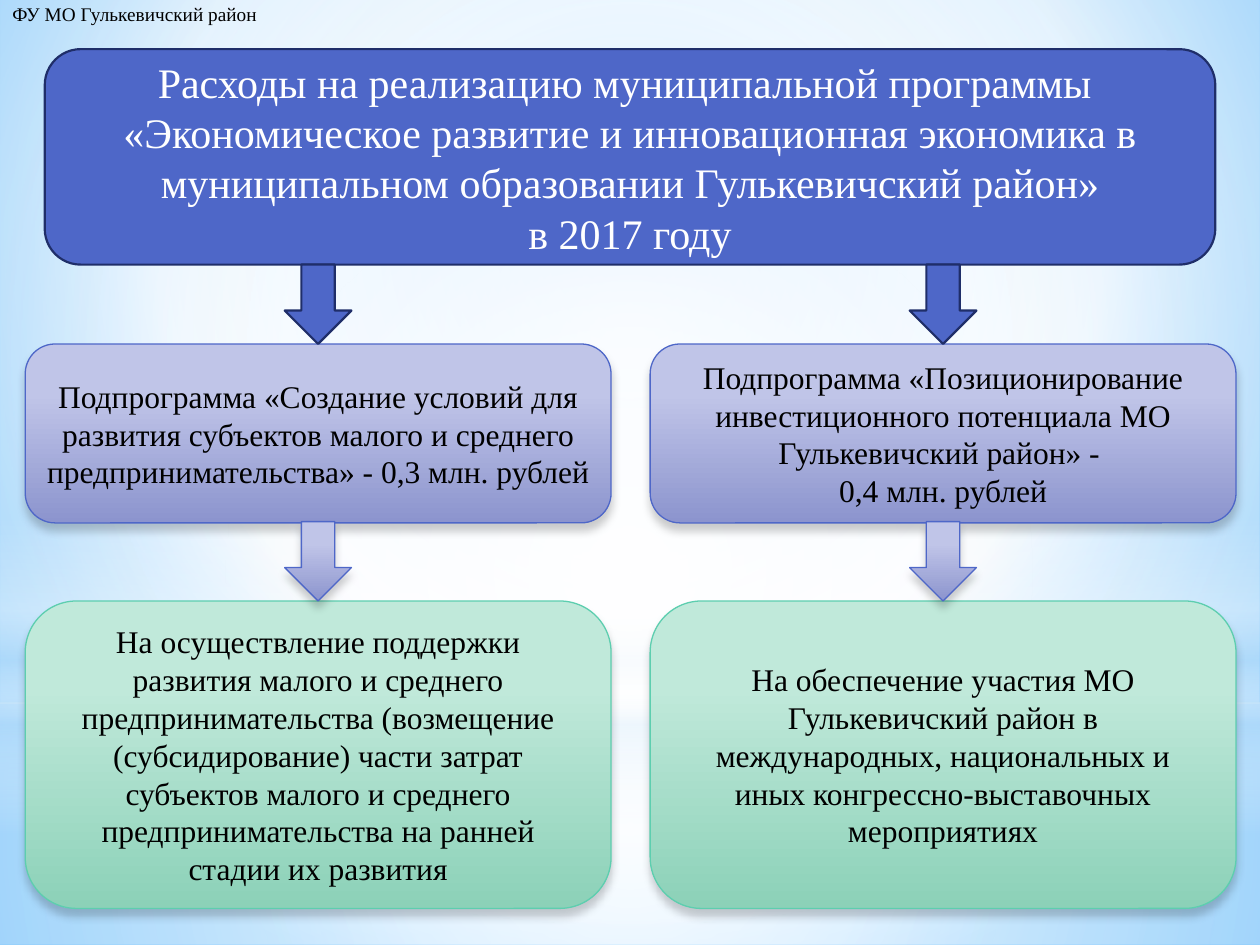
"""Build a slide on the spending of a municipal programme and its two subprogrammes."""
from lxml.etree import SubElement
from pptx import Presentation
from pptx.dml.color import RGBColor
from pptx.enum.shapes import MSO_SHAPE
from pptx.enum.text import MSO_ANCHOR, MSO_AUTO_SIZE, PP_ALIGN
from pptx.oxml.ns import qn
from pptx.util import Inches, Pt

FONT = "Times New Roman"
BLACK = RGBColor(0x00, 0x00, 0x00)
WHITE = RGBColor(0xFF, 0xFF, 0xFF)
BLUE = RGBColor(0x4E, 0x67, 0xC8)
NAVY = RGBColor(0x1F, 0x2E, 0x69)
GREEN = RGBColor(0x5D, 0xCE, 0xAF)
LILAC_TOP = RGBColor(0xC0, 0xC5, 0xE8)
LILAC_BOTTOM = RGBColor(0x8C, 0x94, 0xCE)
MINT_TOP = RGBColor(0xC0, 0xE9, 0xDA)
MINT_BOTTOM = RGBColor(0x8C, 0xD1, 0xB8)
PALE_SKY = RGBColor(0xB4, 0xDC, 0xFA)
SKY = RGBColor(0x9E, 0xD5, 0xFF)
DEEP_SKY = RGBColor(0x5B, 0xB9, 0xFF)

OWNER = "ФУ МО Гулькевичский район"
TITLE = [
    "Расходы на реализацию муниципальной программы ",
    "«Экономическое развитие и инновационная экономика в муниципальном образовании Гулькевичский район»",
    "в 2017 году",
]
COLUMNS = [
    {
        "subprogramme": [
            "Подпрограмма «Создание условий для развития субъектов малого и среднего "
            "предпринимательства» - 0,3 млн. рублей ",
        ],
        "purpose": [
            "На осуществление поддержки развития малого и среднего предпринимательства "
            "(возмещение (субсидирование) части затрат субъектов малого и среднего "
            "предпринимательства на ранней стадии их развития",
        ],
    },
    {
        "subprogramme": [
            "Подпрограмма «Позиционирование инвестиционного потенциала МО Гулькевичский район» - ",
            "0,4 млн. рублей",
        ],
        "purpose": [
            "На обеспечение участия МО Гулькевичский район в международных, "
            "национальных и иных конгрессно-выставочных мероприятиях",
        ],
    },
]

CENTRE = (50, 50, 50, 50)
BACKGROUND_STOPS = [(0, SKY, 100), (60, WHITE, 100), (100, DEEP_SKY, 100)]
BACKDROPS = [
    (MSO_SHAPE.RECTANGLE, 5.58, 1.92, [(0, WHITE, 91), (37, WHITE, 76), (100, PALE_SKY, 79)], CENTRE),
    (MSO_SHAPE.RECTANGLE, 0, 5.58, [(0, WHITE, 89), (48, WHITE, 62), (100, PALE_SKY, 79)], CENTRE),
    (MSO_SHAPE.RECTANGLE, 4.12, 2.5, [(0, WHITE, 0), (29, WHITE, 30), (45, PALE_SKY, 40),
                                     (55, WHITE, 26), (65, PALE_SKY, 60), (100, WHITE, 0)], None),
    (MSO_SHAPE.OVAL, 1.75, 5.58, [(0, WHITE, 100), (56, WHITE, 0)], CENTRE),
]
LILAC_STOPS = [(28, LILAC_TOP, 100), (100, LILAC_BOTTOM, 100)]
MINT_STOPS = [(28, MINT_TOP, 100), (100, MINT_BOTTOM, 100)]

SLIDE_WIDTH, SLIDE_HEIGHT = 10, 7.5
TITLE_TOP, TITLE_HEIGHT, TITLE_WIDTH = 0.39, 1.71, 9.29
COLUMN_LEFT, COLUMN_WIDTH, COLUMN_STEP = 0.2, 4.65, 4.96
SUBPROGRAMME_HEIGHT, PURPOSE_HEIGHT = 1.42, 2.44
ARROW_WIDTH, ARROW_HEIGHT = 0.53, 0.63


def add_color(parent, color, opacity):
    node = SubElement(parent, qn("a:srgbClr"), val=str(color))
    if opacity < 100:
        SubElement(node, qn("a:alpha"), val=str(opacity * 1000))


def set_gradient(fill, element, stops, focus=None):
    fill.gradient()
    gradient = next(element.iter(qn("a:gradFill")))
    for child in list(gradient):
        gradient.remove(child)
    stop_list = SubElement(gradient, qn("a:gsLst"))
    for position, color, opacity in stops:
        add_color(SubElement(stop_list, qn("a:gs"), pos=str(position * 1000)), color, opacity)
    if focus:
        circle = SubElement(gradient, qn("a:path"), {"path": "circle"})
        sides = {side: str(share * 1000) for side, share in zip("ltrb", focus)}
        SubElement(circle, qn("a:fillToRect"), sides)
    else:
        SubElement(gradient, qn("a:lin"), ang="5400000", scaled="0")


def add_drop_shadow(shape):
    effects = shape.element.spPr.find(qn("a:effectLst"))
    shadow = SubElement(effects, qn("a:outerShdw"), blurRad=str(Pt(5)), dist=str(Pt(4)),
                        dir="5400000", rotWithShape="0")
    add_color(shadow, BLACK, 20)


def add_figure(page, kind, left, top, width, height, stops=None, focus=None, line=None):
    shape = page.shapes.add_shape(kind, Inches(left), Inches(top), Inches(width), Inches(height))
    shape.shadow.inherit = False
    if stops:
        set_gradient(shape.fill, shape.element, stops, focus)
    else:
        shape.fill.solid()
        shape.fill.fore_color.rgb = BLUE
    if line is None:
        shape.line.fill.background()
    else:
        shape.line.color.rgb = line
        shape.line.width = Pt(0.75 if stops else 1.25)
        if stops:
            add_drop_shadow(shape)
    return shape


def write(shape, paragraphs, size, color, alignment):
    frame = shape.text_frame
    for index, words in enumerate(paragraphs):
        para = frame.add_paragraph() if index else frame.paragraphs[0]
        para.alignment = alignment
        span = para.add_run()
        span.text = words
        span.font.name = FONT
        span.font.size = Pt(size)
        span.font.color.rgb = color


def add_box(page, area, paragraphs, size, color, line, stops=None):
    box = add_figure(page, MSO_SHAPE.ROUNDED_RECTANGLE, *area, stops=stops, line=line)
    box.text_frame.word_wrap = True
    box.text_frame.vertical_anchor = MSO_ANCHOR.MIDDLE
    write(box, paragraphs, size, color, PP_ALIGN.CENTER)


def main():
    deck = Presentation()
    deck.slide_width, deck.slide_height = Inches(SLIDE_WIDTH), Inches(SLIDE_HEIGHT)
    page = deck.slides.add_slide(deck.slide_layouts[6])
    set_gradient(page.background.fill, page.element, BACKGROUND_STOPS, (20, 10, 20, 60))
    for kind, top, height, stops, focus in BACKDROPS:
        add_figure(page, kind, 0, top, SLIDE_WIDTH, height, stops, focus)

    owner = page.shapes.add_textbox(Inches(0), Inches(-0.03), Inches(2.18), Inches(0.29))
    owner.text_frame.word_wrap = False
    owner.text_frame.auto_size = MSO_AUTO_SIZE.SHAPE_TO_FIT_TEXT
    write(owner, [OWNER], 11, BLACK, PP_ALIGN.LEFT)

    title_left = (SLIDE_WIDTH - TITLE_WIDTH) / 2
    add_box(page, (title_left, TITLE_TOP, TITLE_WIDTH, TITLE_HEIGHT), TITLE, 24, WHITE, NAVY)

    first_arrow_top = TITLE_TOP + TITLE_HEIGHT
    subprogramme_top = first_arrow_top + ARROW_HEIGHT
    second_arrow_top = subprogramme_top + SUBPROGRAMME_HEIGHT
    purpose_top = second_arrow_top + ARROW_HEIGHT - 0.01
    arrows = [(first_arrow_top, None, NAVY), (second_arrow_top - 0.01, LILAC_STOPS, BLUE)]
    for index, column in enumerate(COLUMNS):
        left = COLUMN_LEFT + index * COLUMN_STEP
        add_box(page, (left, subprogramme_top, COLUMN_WIDTH, SUBPROGRAMME_HEIGHT),
                column["subprogramme"], 18, BLACK, BLUE, LILAC_STOPS)
        add_box(page, (left, purpose_top, COLUMN_WIDTH, PURPOSE_HEIGHT),
                column["purpose"], 18, BLACK, GREEN, MINT_STOPS)
        arrow_left = left + (COLUMN_WIDTH - ARROW_WIDTH) / 2
        for top, stops, line in arrows:
            add_figure(page, MSO_SHAPE.DOWN_ARROW, arrow_left, top, ARROW_WIDTH, ARROW_HEIGHT,
                       stops=stops, line=line)

    deck.save("out.pptx")


if __name__ == "__main__":
    main()
